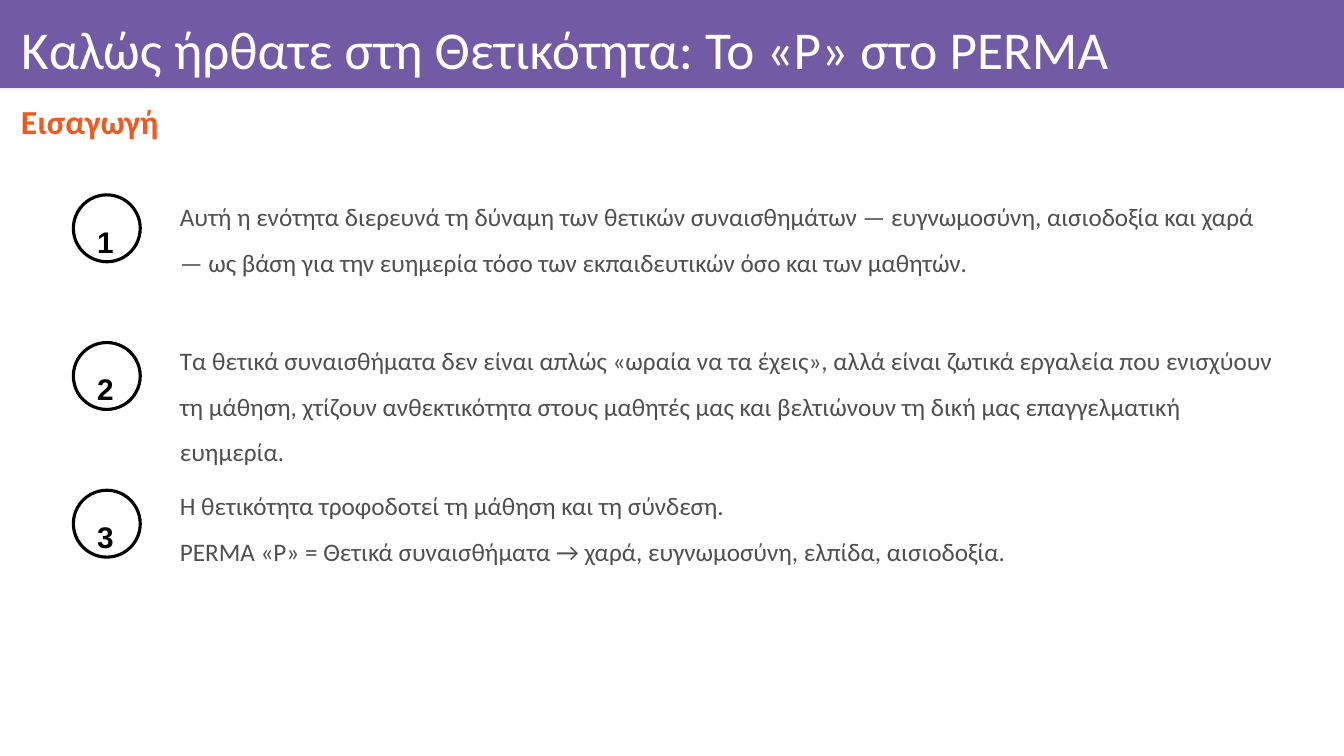
from dataclasses import dataclass

from pptx import Presentation
from pptx import util as u
from pptx.dml.color import RGBColor
from pptx.enum import shapes, text

COLORS = {"band": "735AA5", "title": "FFFFFF", "heading": "F05A22",
          "body": "4F4F50", "number": "000000"}
PP, ANCHOR, FIT = text.PP_ALIGN, text.MSO_ANCHOR, text.MSO_AUTO_SIZE


@dataclass(frozen=True)
class Style:
    size: float
    color: str
    font: str = "Calibri"
    bold: bool = False
    align: PP = PP.LEFT
    spacing: float = 1.0


@dataclass(frozen=True)
class Point:
    top: float
    width: float
    height: float
    lines: tuple[str, ...]


TITLE = Style(38, "title")
HEADING = Style(24, "heading", bold=True, align=PP.JUSTIFY, spacing=0.9)
BODY = Style(18, "body", spacing=1.5)
NUMBER = Style(21.3, "number", "Arial", True, PP.CENTER, 1.6)

POINTS = (
    Point(129.6, 790, 91.4, (
        "Αυτή η ενότητα διερευνά τη δύναμη των θετικών συναισθημάτων — ευγνωμοσύνη, "
        "αισιοδοξία και χαρά — ως βάση για την ευημερία τόσο των εκπαιδευτικών όσο "
        "και των μαθητών.",)),
    Point(232.6, 805, 105, (
        "Τα θετικά συναισθήματα δεν είναι απλώς «ωραία να τα έχεις», αλλά είναι ζωτικά "
        "εργαλεία που ενισχύουν τη μάθηση, χτίζουν ανθεκτικότητα στους μαθητές μας και "
        "βελτιώνουν τη δική μας επαγγελματική ευημερία.",)),
    Point(336.2, 648, 72.7, (
        "Η θετικότητα τροφοδοτεί τη μάθηση και τη σύνδεση.",
        "PERMA «P» = Θετικά συναισθήματα → χαρά, ευγνωμοσύνη, ελπίδα, αισιοδοξία.")),
)
CIRCLE_TOP, CIRCLE_STEP, CIRCLE_SIZE = 139.2, 105.5, 47.8


def rgb(name: str) -> RGBColor:
    return RGBColor.from_string(COLORS[name])


def box(left: float, top: float, width: float, height: float) -> list[u.Length]:
    return [u.Pt(v) for v in (left, top, width, height)]


def write(tf, lines: tuple[str, ...], style: Style, insets=(7.2, 3.6, 7.2, 3.6),
          anchor=ANCHOR.TOP, fit=FIT.NONE) -> None:
    tf.word_wrap = True
    tf.auto_size = fit
    tf.vertical_anchor = anchor
    tf.margin_left, tf.margin_top, tf.margin_right, tf.margin_bottom = map(u.Pt, insets)
    for i, line in enumerate(lines):
        p = tf.add_paragraph() if i else tf.paragraphs[0]
        p.alignment, p.line_spacing = style.align, style.spacing
        r = p.add_run()
        r.text = line
        r.font.name, r.font.size, r.font.bold = style.font, u.Pt(style.size), style.bold
        r.font.color.rgb = rgb(style.color)


def add_point(s, index: int, point: Point) -> None:
    top = CIRCLE_TOP + index * CIRCLE_STEP
    # Numbered circle
    sp = s.shapes.add_shape(shapes.MSO_SHAPE.OVAL, *box(52.4, top, CIRCLE_SIZE, CIRCLE_SIZE))
    sp.shadow.inherit = False
    sp.fill.background()
    sp.line.color.rgb = rgb("number")
    sp.line.width = u.Pt(2.25)
    sp = s.shapes.add_textbox(*box(53.7, top + 5.1, 43.2, 31.7))
    write(sp.text_frame, (str(index + 1),), NUMBER, (0, 0, 0, 0), fit=FIT.SHAPE_TO_FIT_TEXT)
    # Explanation
    sp = s.shapes.add_textbox(*box(121.4, point.top, point.width, point.height))
    write(sp.text_frame, point.lines, BODY)


def main() -> None:
    prs = Presentation()
    prs.slide_width, prs.slide_height = u.Pt(960), u.Pt(540)
    s = prs.slides.add_slide(prs.slide_layouts[5])

    # Title band, sent behind the title
    band = s.shapes.add_shape(shapes.MSO_SHAPE.RECTANGLE, *box(0, 0, 960, 62.9))
    band.shadow.inherit = False
    band.fill.solid()
    band.fill.fore_color.rgb = rgb("band")
    band.line.fill.background()
    s.shapes.element.insert(2, band.element)

    # Title
    title = s.shapes.title
    title.left, title.top, title.width, title.height = box(7.9, 6.5, 940, 56.2)
    write(title.text_frame, ("Καλώς ήρθατε στη Θετικότητα: Το «P» στο PERMA",), TITLE,
          (7.2, 4.3, 4.3, 4.3), ANCHOR.MIDDLE)

    # Section heading
    sp = s.shapes.add_textbox(*box(7.9, 67, 940, 43.2))
    write(sp.text_frame, ("Εισαγωγή",), HEADING, anchor=ANCHOR.MIDDLE)

    # Numbered points
    for index, point in enumerate(POINTS):
        add_point(s, index, point)

    prs.save("out.pptx")


if __name__ == "__main__":
    main()
